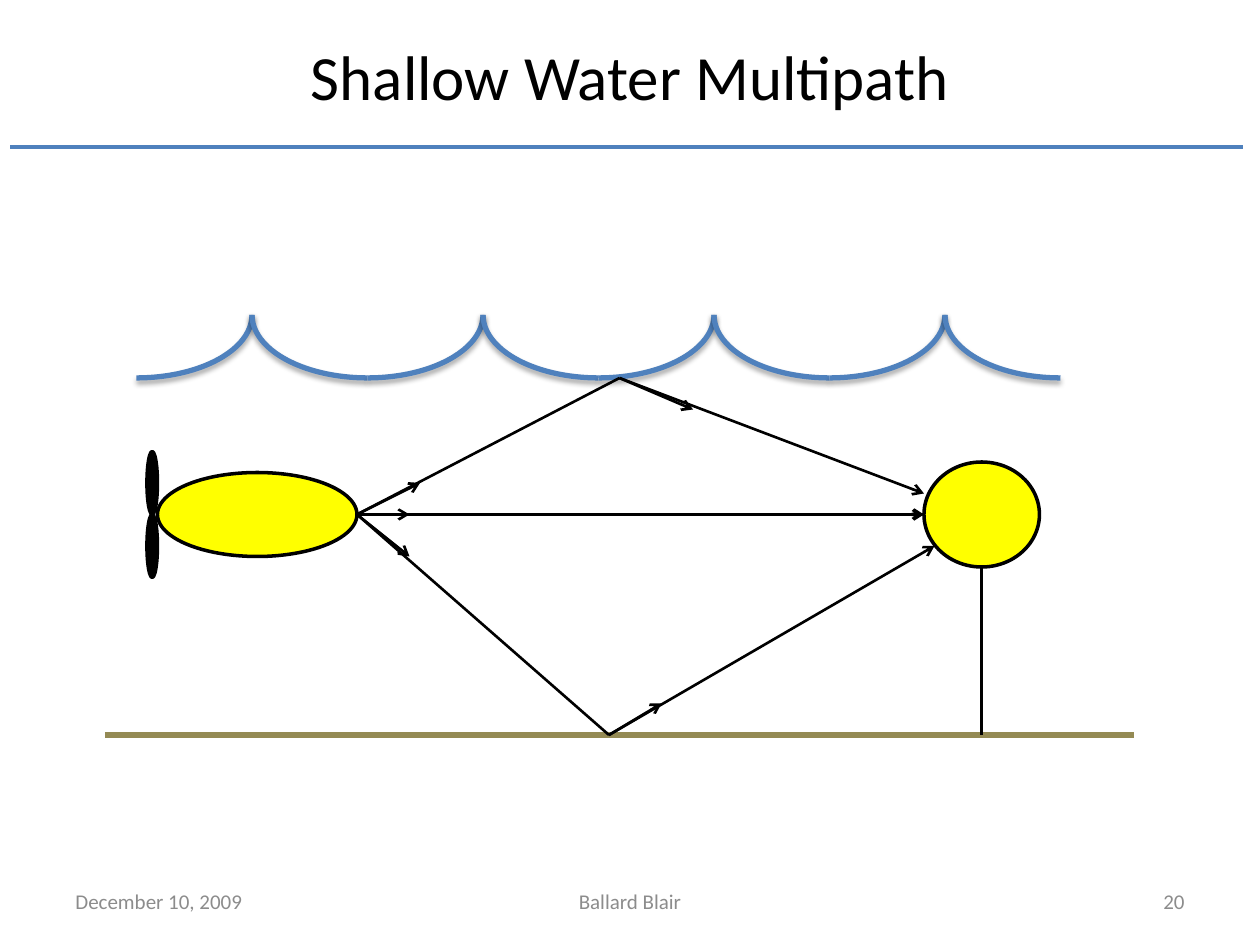
from dataclasses import dataclass

from lxml import etree
from pptx import Presentation
from pptx.dml.color import RGBColor
from pptx.enum import shapes, text
from pptx.oxml import ns
from pptx.util import Pt


@dataclass(frozen=True)
class Theme:
    font: str = "Calibri"
    black: str = "000000"
    blue: str = "4F81BD"
    yellow: str = "FFFF00"
    sand: str = "948A54"
    grey: str = "8C8C8C"
    title_size: float = 36
    footer_size: float = 12
    thin: float = 1.5
    medium: float = 2
    thick: float = 3


@dataclass(frozen=True)
class Segment:
    start: tuple[float, float]
    end: tuple[float, float]
    width: float = Theme.thin
    color: str = Theme.black
    arrow: bool = False


@dataclass(frozen=True)
class Oval:
    left: float
    top: float
    width: float
    height: float
    fill: str


@dataclass(frozen=True)
class Footer:
    left: float
    width: float
    words: str
    align: text.PP_ALIGN


THEME = Theme()


def style_text(frame, words: str, size: float, color: str, align) -> None:
    frame.text = words
    frame.word_wrap = True
    frame.auto_size = text.MSO_AUTO_SIZE.NONE
    frame.vertical_anchor = text.MSO_ANCHOR.MIDDLE
    line = frame.paragraphs[0]
    line.alignment = align
    font = line.runs[0].font
    font.name, font.size = THEME.font, Pt(size)
    font.color.rgb = RGBColor.from_string(color)


def style_line(line, color: str, width: float) -> None:
    line.color.rgb = RGBColor.from_string(color)
    line.width = Pt(width)


def draw_segment(slide, segment: Segment) -> None:
    ends = [Pt(value) for value in (*segment.start, *segment.end)]
    connector = slide.shapes.add_connector(shapes.MSO_CONNECTOR.STRAIGHT, *ends)
    style_line(connector.line, segment.color, segment.width)
    if segment.arrow:
        etree.SubElement(connector.line._get_or_add_ln(), ns.qn("a:tailEnd"), type="arrow")
    etree.SubElement(connector._element.spPr, ns.qn("a:effectLst"))


def draw_oval(slide, oval: Oval) -> None:
    box = [Pt(value) for value in (oval.left, oval.top, oval.width, oval.height)]
    body = slide.shapes.add_shape(shapes.MSO_SHAPE.OVAL, *box)
    body.shadow.inherit = False
    body.fill.solid()
    body.fill.fore_color.rgb = RGBColor.from_string(oval.fill)
    style_line(body.line, THEME.black, THEME.medium)


def draw_wave_half(slide, left: float, mirrored: bool) -> None:
    """Draw a quarter arc that rises from a trough to a crest."""
    box = [Pt(value) for value in (left, WAVE_TOP, WAVE_LENGTH, WAVE_HEIGHT)]
    wave = slide.shapes.add_shape(shapes.MSO_SHAPE.ARC, *box)
    wave.fill.background()
    style_line(wave.line, THEME.blue, THEME.thick)
    properties = wave._element.spPr
    properties.xfrm.set("flipV", "1")
    if mirrored:
        properties.xfrm.set("flipH", "1")
    # Soft shadow straight below the wave
    effects = etree.SubElement(properties, ns.qn("a:effectLst"))
    shadow = etree.SubElement(
        effects, ns.qn("a:outerShdw"), blurRad=str(Pt(3.1)), dist=str(Pt(1.8)),
        dir="5400000", rotWithShape="0")
    color = etree.SubElement(shadow, ns.qn("a:srgbClr"), val=THEME.black)
    etree.SubElement(color, ns.qn("a:alpha"), val="35000")


def draw_footer(slide, footer: Footer) -> None:
    box = slide.shapes.add_textbox(Pt(footer.left), Pt(500.4), Pt(footer.width), Pt(28.8))
    style_text(box.text_frame, footer.words, THEME.footer_size, THEME.grey, footer.align)


# Waves: one crest per wavelength
WAVE_TOP, WAVE_LENGTH, WAVE_HEIGHT = 144, 132, 72
CRESTS = [144 + WAVE_LENGTH * i for i in range(4)]

# Points where the sound paths start, bounce and arrive
NOSE = (204, 294)
SURFACE_BOUNCE = (354, 216)
SEABED_BOUNCE = (348, 420)

TITLE_RULE = Segment((6, 84), (710.5, 84), THEME.medium, THEME.blue)
SEABED = Segment((60, 420), (648, 420), THEME.thick, THEME.sand)
TETHER = Segment((561, 324), (561, 420))

VEHICLE = [
    Oval(90, 270, 114, 48, THEME.yellow),
    Oval(84, 258, 6, 36, THEME.black),
    Oval(84, 294, 6, 36, THEME.black),
]
RECEIVER = Oval(528, 264, 66, 60, THEME.yellow)

PATHS = [
    # Direct path
    Segment(NOSE, (234, 294), arrow=True),
    Segment(NOSE, (528, 294), THEME.medium, arrow=True),
    # Path by way of the seabed
    Segment(NOSE, (234, 318), arrow=True),
    Segment(SEABED_BOUNCE, (378, 402), arrow=True),
    Segment(NOSE, SEABED_BOUNCE),
    Segment(SEABED_BOUNCE, (534, 312), arrow=True),
    # Path by way of the surface
    Segment(NOSE, (240, 276), arrow=True),
    Segment(SURFACE_BOUNCE, (396, 234), arrow=True),
    Segment(NOSE, SURFACE_BOUNCE),
    Segment(SURFACE_BOUNCE, (528, 282), arrow=True),
]

FOOTERS = [
    Footer(36, 168, "December 10, 2009", text.PP_ALIGN.LEFT),
    Footer(516, 168, "20", text.PP_ALIGN.RIGHT),
    Footer(246, 228, "Ballard Blair", text.PP_ALIGN.CENTER),
]


def main() -> None:
    deck = Presentation()
    deck.slide_width, deck.slide_height = Pt(720), Pt(540)
    slide = deck.slides.add_slide(deck.slide_layouts[5])

    # Title and its rule
    title = slide.shapes.title
    title.left, title.top, title.width, title.height = Pt(96), Pt(21.6), Pt(528), Pt(43.2)
    style_text(title.text_frame, "Shallow Water Multipath", THEME.title_size,
               THEME.black, text.PP_ALIGN.CENTER)
    draw_segment(slide, TITLE_RULE)

    # Vehicle, sea surface, seabed and moored receiver
    for part in VEHICLE:
        draw_oval(slide, part)
    for crest in CRESTS:
        draw_wave_half(slide, crest - WAVE_LENGTH, mirrored=False)
        draw_wave_half(slide, crest, mirrored=True)
    draw_segment(slide, SEABED)
    draw_oval(slide, RECEIVER)
    draw_segment(slide, TETHER)

    # Sound paths
    for segment in PATHS:
        draw_segment(slide, segment)

    for footer in FOOTERS:
        draw_footer(slide, footer)

    deck.save("out.pptx")


if __name__ == "__main__":
    main()
